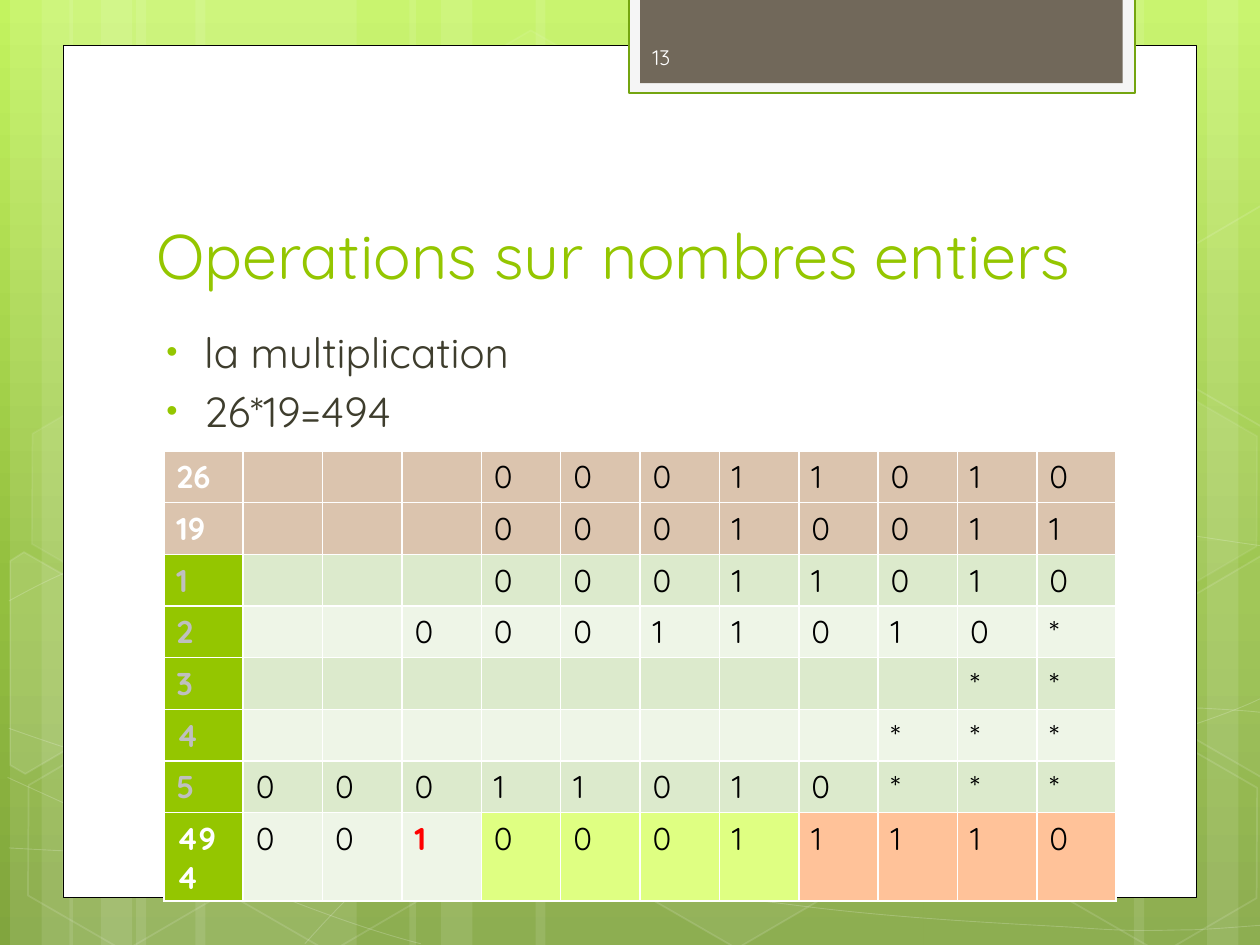
from copy import deepcopy
from math import cos, radians, sin

from lxml.etree import SubElement
from pptx import Presentation
from pptx.dml.color import RGBColor
from pptx.enum.shapes import MSO_SHAPE
from pptx.enum.text import MSO_ANCHOR, PP_ALIGN
from pptx.oxml import parse_xml
from pptx.oxml.ns import nsdecls, qn
from pptx.util import Inches, Pt

FONT = "Quicksand"
WHITE, GREEN, SAND = "FFFFFF", "94C600", "DBC4AE"
PALE, MIST, LIME, PEACH = "EEF5E7", "DCEACC", "DFFF82", "FFC299"
TILT = 30

SKY = [(0, "C3F35F"), (0.62, "93BF3F"), (1, "81A53E")]
# left, width of the vertical light bands
BANDS = [(1.08, 1.75), (0.08, 0.5), (0.33, 0.83), (1.55, 1.75), (0.55, 0.5), (0.8, 0.83),
         (7.33, 1.75), (9.58, 0.5), (9, 0.83), (4.25, 3.08), (3.25, 0.5), (3.5, 0.83)]
# start point, then Bezier segments of three points each
WAVES = [
    [(0.07, 6.73), (0.61, 6.76), (1.15, 6.79), (1.9, 6.78), (2.65, 6.77), (3.58, 6.75),
     (4.58, 6.65), (5.58, 6.55), (7, 6.36), (7.92, 6.17), (8.83, 5.98), (9.77, 5.68),
     (10.07, 5.51)],
    [(0.07, 4.77), (0.36, 4.61), (0.65, 4.46), (1.21, 4.31), (1.78, 4.16), (2.59, 3.94),
     (3.47, 3.87), (4.36, 3.8), (5.44, 3.79), (6.54, 3.87), (7.64, 3.95), (9.47, 4.26),
     (10.07, 4.34)],
    [(0.06, 6.17), (1.27, 6.72), (2.47, 7.27), (3.34, 7.49)],
    [(0.07, 5.78), (0.38, 5.89), (0.7, 6), (1.28, 6.16), (1.86, 6.31), (2.73, 6.56),
     (3.57, 6.73), (4.4, 6.9), (5.45, 7.08), (6.28, 7.18), (7.11, 7.29), (8, 7.33),
     (8.53, 7.36), (9.05, 7.4), (9.19, 7.38), (9.45, 7.38), (9.71, 7.37), (9.89, 7.35),
     (10.07, 7.34)],
    [(2.42, 7.49), (2.6, 7.29), (2.78, 7.09), (3.02, 6.91), (3.26, 6.73), (3.6, 6.53),
     (3.88, 6.39), (4.16, 6.25), (4.33, 6.19), (4.7, 6.09), (5.06, 5.99), (5.73, 5.85),
     (6.08, 5.78), (6.44, 5.71), (6.49, 5.71), (6.8, 5.69), (7.11, 5.66), (7.6, 5.63),
     (7.94, 5.62), (8.29, 5.61), (8.86, 5.62), (8.86, 5.62), (9.08, 5.62), (9.31, 5.62),
     (9.53, 5.62), (9.71, 5.63), (9.88, 5.64), (9.97, 5.65), (10.06, 5.66), (10.03, 5.65),
     (10.06, 5.66)],
]
# left, top, fill opacity, line opacity
CELLS = [(3.34, 0.36, 4, 8), (4.97, 5.89, 6, 12), (0.11, 5.91, 0, 12), (0.14, 3.12, 7, 8),
         (1.74, 5.92, 0, 12), (7.53, 4.53, 10, 12), (8.34, 5.93, 0, 12), (8.34, 3.14, 7, 8)]
# cut hexagons at the slide edges: fill opacity, centre, corners
EDGES = [
    (10, (0.36, 5.35), [(0.08, 4.45), (0.19, 4.38), (0.96, 4.82), (0.95, 5.7), (0.2, 6.14),
                        (0.08, 6.07)]),
    (4, (9.85, 5.2), [(9.26, 4.85), (10.01, 4.41), (10.09, 4.46), (10.09, 6.13),
                      (10.02, 6.17), (9.26, 5.73)]),
    (0, (9.85, 2.41), [(9.26, 2.07), (10.01, 1.63), (10.1, 1.68), (10.09, 3.35),
                       (10.02, 3.39), (9.26, 2.95)]),
]
# label, label colour, digits ("." is an empty cell), fills as (colour, count)
ROWS = [
    ("26", WHITE, "...00011010", [(SAND, 12)]),
    ("19", WHITE, "...00010011", [(SAND, 12)]),
    ("1", "BFBFBF", "...00011010", [(GREEN, 1), (MIST, 11)]),
    ("2", "BFBFBF", "..00011010*", [(GREEN, 1), (PALE, 11)]),
    ("3", "BFBFBF", ".........**", [(GREEN, 1), (MIST, 11)]),
    ("4", "BFBFBF", "........***", [(GREEN, 1), (PALE, 11)]),
    ("5", "BFBFBF", "00011010***", [(GREEN, 1), (MIST, 11)]),
    ("494", WHITE, "00100011110", [(GREEN, 1), (PALE, 3), (LIME, 4), (PEACH, 4)]),
]
CARRY = (7, 3)


def rgb(code):
    return RGBColor.from_string(code)


def style(item, **values):
    for name, value in values.items():
        setattr(item, name, value)


def place(shape, left, top, width, height):
    style(shape, left=Inches(left), top=Inches(top), width=Inches(width), height=Inches(height))


def write(para, text, size, color, bold=False):
    run = para.add_run()
    run.text = text
    style(run.font, name=FONT, size=Pt(size), bold=bold)
    run.font.color.rgb = rgb(color)


def coat(fill, holder, color, alpha):
    """Fill with a colour at an opacity in percent; 0 means no fill."""
    if not alpha:
        fill.background()
        return
    fill.solid()
    fill.fore_color.rgb = rgb(color)
    if alpha < 100:
        tint = holder.find(qn("a:solidFill")).find(qn("a:srgbClr"))
        SubElement(tint, qn("a:alpha")).set("val", str(alpha * 1000))


def paint(shape, fill=WHITE, alpha=100, line=WHITE, width=1, edge=0):
    shape.shadow.inherit = False
    props = shape.element.spPr
    coat(shape.fill, props, fill, alpha)
    if edge:
        shape.line.width = Pt(width)
    coat(shape.line.fill, props.find(qn("a:ln")), line, edge)


def block(slide, box, kind=MSO_SHAPE.RECTANGLE, **look):
    shape = slide.shapes.add_shape(kind, *map(Inches, box))
    paint(shape, **look)
    return shape


def outline(slide, points, close, **look):
    spots = [(Inches(x), Inches(y)) for x, y in points]
    pen = slide.shapes.build_freeform(*spots[0], scale=1.0)
    pen.add_line_segments(spots[1:], close=close)
    shape = pen.convert_to_shape()
    paint(shape, **look)
    return shape


def bend(shape):
    """Turn each three line steps of a freeform into one Bezier curve."""
    steps = shape.element.xpath(".//a:path/a:lnTo")
    for i in range(0, len(steps), 3):
        trio = steps[i:i + 3]
        arc = parse_xml(f'<a:cubicBezTo {nsdecls("a")}/>')
        trio[0].addprevious(arc)
        for step in trio:
            arc.append(step[0])
            step.getparent().remove(step)


def turn(point, pivot, angle):
    x, y = point[0] - pivot[0], point[1] - pivot[1]
    c, s = cos(radians(angle)), sin(radians(angle))
    return pivot[0] + x * c - y * s, pivot[1] + x * s + y * c


def backdrop(slide):
    fill = slide.background.fill
    fill.gradient()
    fill.gradient_angle = 270
    stops = slide.element.xpath(".//a:gsLst")[0]
    stops.append(deepcopy(stops[-1]))
    for stop, (spot, color) in zip(fill.gradient_stops, SKY):
        stop.position = spot
        stop.color.rgb = rgb(color)
    for left, width in BANDS:
        block(slide, (left, 0, width, 7.5), alpha=10)
    for wave in WAVES:
        bend(outline(slide, wave, False, alpha=0, width=0.5, edge=20))
    for left, top, alpha, edge in CELLS:
        cell = block(slide, (left, top, 1.75, 1.52), MSO_SHAPE.HEXAGON, alpha=alpha, edge=edge)
        cell.adjustments[0] = 0.285
        cell.rotation = TILT
    for alpha, pivot, corners in EDGES:
        flat = [turn(corner, pivot, -TILT) for corner in corners]
        outline(slide, flat, True, alpha=alpha, edge=12).rotation = TILT


def frame(slide):
    block(slide, (0.5, 0.36, 9, 6.76), line="000000", width=0.5, edge=100)
    block(slide, (4.99, -0.02, 4.02, 0.76), fill="F5F5F5", line="74A510", width=1.25, edge=100)
    block(slide, (5.08, -0.02, 3.83, 0.68), fill="71685A")


def number(slide, text):
    box = slide.shapes.add_textbox(*map(Inches, (5.08, 0.25, 1.46, 0.4)))
    style(box.text_frame, word_wrap=True, vertical_anchor=MSO_ANCHOR.MIDDLE)
    write(box.text_frame.paragraphs[0], text, 12, "FEFEFE")


def heading(slide, text):
    title = slide.shapes.title
    place(title, 1.14, 1.12, 7.68, 1.25)
    title.text_frame.vertical_anchor = MSO_ANCHOR.BOTTOM
    para = title.text_frame.paragraphs[0]
    para.alignment = PP_ALIGN.LEFT
    write(para, text, 36, GREEN)


def bullets(slide, lines):
    body = slide.placeholders[1]
    place(body, 1.14, 2.54, 7.41, 1.13)
    for i, text in enumerate(lines):
        para = body.text_frame.add_paragraph() if i else body.text_frame.paragraphs[0]
        write(para, text, 24, "3E3D2D")
        props = para._p.get_or_add_pPr()
        props.set("marL", str(Inches(0.38)))
        props.set("indent", str(Inches(-0.3)))
        for part in (f'<a:buClr {nsdecls("a")}><a:srgbClr val="{GREEN}"/></a:buClr>',
                     f'<a:buSzPct {nsdecls("a")} val="76000"/>',
                     f'<a:buFont {nsdecls("a")} typeface="Arial"/>',
                     f'<a:buChar {nsdecls("a")} char="•"/>'):
            props.append(parse_xml(part))


def border(cell):
    props = cell._tc.get_or_add_tcPr()
    for side in ("lnL", "lnR", "lnT", "lnB"):
        props.append(parse_xml(
            f'<a:{side} {nsdecls("a")} w="{Pt(1)}"><a:solidFill>'
            f'<a:srgbClr val="{WHITE}"/></a:solidFill></a:{side}>'))


def grid(slide):
    wide, high = 0.63, 0.41
    table = slide.shapes.add_table(len(ROWS), 12, Inches(1.3), Inches(3.58),
                                   Inches(12 * wide), Inches(len(ROWS) * high)).table
    for col in table.columns:
        col.width = Inches(wide)
    for r, (label, tone, digits, spans) in enumerate(ROWS):
        table.rows[r].height = Inches(high)
        fills = [color for color, count in spans for _ in range(count)]
        for c, (text, fill) in enumerate(zip([label, *digits], fills)):
            cell = table.cell(r, c)
            border(cell)
            cell.fill.solid()
            cell.fill.fore_color.rgb = rgb(fill)
            if text != ".":
                carry = (r, c) == CARRY
                color = "FF0000" if carry else "000000" if c else tone
                write(cell.text_frame.paragraphs[0], text, 18, color, carry or c == 0)


def main():
    deck = Presentation()
    style(deck, slide_width=Inches(10), slide_height=Inches(7.5))
    slide = deck.slides.add_slide(deck.slide_layouts[1])
    backdrop(slide)
    frame(slide)
    heading(slide, "Operations sur nombres entiers")
    bullets(slide, ["la multiplication", "26*19=494"])
    tree = slide.shapes._spTree
    for holder in (slide.shapes.title, slide.placeholders[1]):
        tree.append(holder.element)
    number(slide, "13")
    grid(slide)
    deck.save("out.pptx")


if __name__ == "__main__":
    main()
